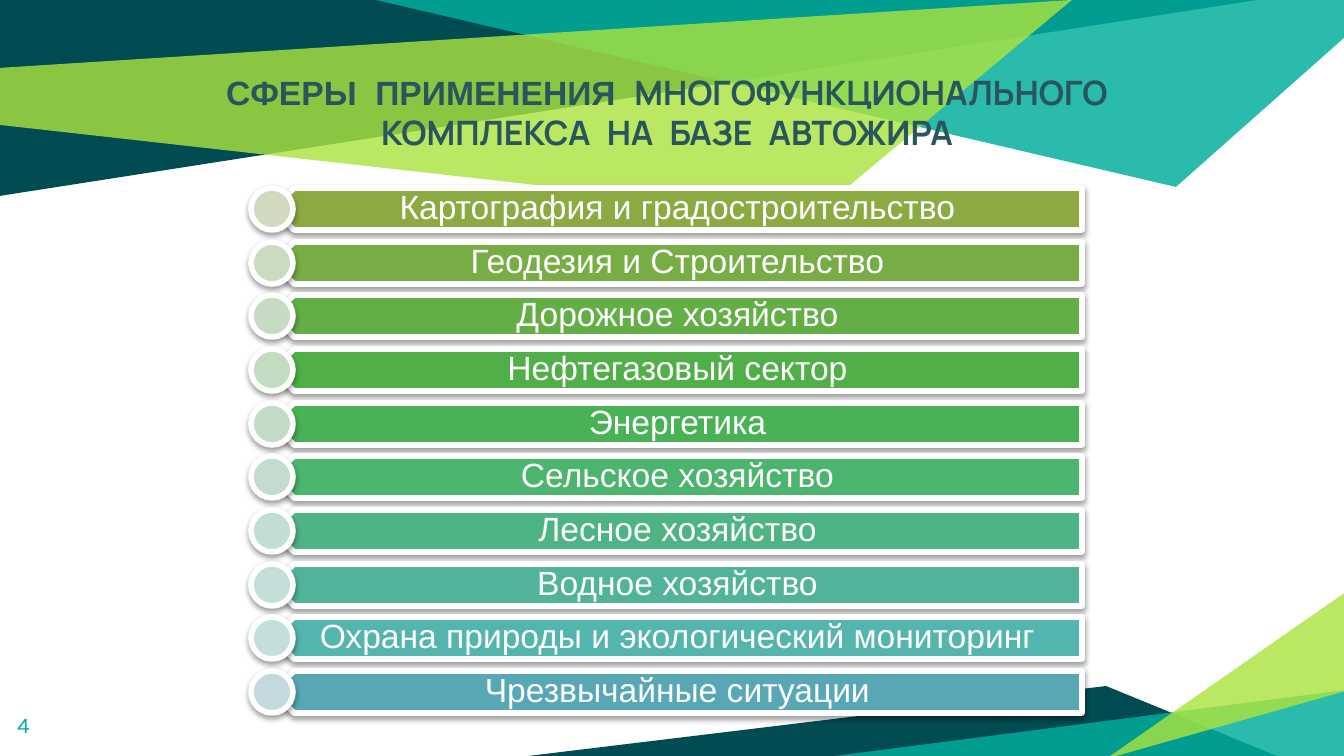
from typing import NamedTuple

from lxml import etree
from pptx import Presentation
from pptx.dml.color import RGBColor
from pptx.enum.shapes import MSO_SHAPE
from pptx.enum.text import MSO_ANCHOR, PP_ALIGN
from pptx.oxml.ns import qn
from pptx.util import Emu, Pt

PLATE, CIRCLE = MSO_SHAPE.PENTAGON, MSO_SHAPE.OVAL
TOP, MIDDLE = MSO_ANCHOR.TOP, MSO_ANCHOR.MIDDLE
LEFT, CENTER = PP_ALIGN.LEFT, PP_ALIGN.CENTER
EMU_PER_PX = 914400 / 134.4


class Theme(NamedTuple):
    dark: str = "004C52"
    teal: str = "00AE9D"
    lime: str = "ABE33F"
    title: str = "29555D"
    white: str = "FFFFFF"
    shadow: str = "000000"
    heading_size: int = 18
    number_size: int = 12
    outline: int = 3
    body_font: str = "Arial"
    title_font: str = "Manrope"
    number_font: str = "Karla"


class Box(NamedTuple):
    left: int
    top: int
    width: int
    height: int


class Facet(NamedTuple):
    points: list[tuple[int, int]]
    color: str
    opacity: int


class Sphere(NamedTuple):
    label: str
    bar: str
    dot: str


THEME = Theme()

FACETS = [
    # Top band
    Facet([(0, 0), (0, 196), (1257, 0)], THEME.dark, 100),
    Facet([(376, 0), (1176, 187), (1344, 38), (1344, 0)], THEME.teal, 83),
    Facet([(-1, 68), (0, 125), (813, 216), (1072, 0)], THEME.lime, 81),
    # Bottom corner
    Facet([(528, 756), (1277, 756), (1106, 686)], THEME.dark, 100),
    Facet([(1346, 690), (1346, 759), (812, 759)], THEME.teal, 83),
    Facet([(1346, 691), (1346, 592), (1106, 759)], THEME.lime, 81),
]

SPHERES = [
    Sphere("Картография и градостроительство", "8BAB42", "D0DAC0"),
    Sphere("Геодезия и Строительство", "77AD44", "CBDBC1"),
    Sphere("Дорожное хозяйство", "63AE45", "C6DBC1"),
    Sphere("Нефтегазовый сектор", "50B047", "C1DCC1"),
    Sphere("Энергетика", "49B256", "C2DCC7"),
    Sphere("Сельское хозяйство", "4BB46D", "C2DCCD"),
    Sphere("Лесное хозяйство", "4EB484", "C2DDD2"),
    Sphere("Водное хозяйство", "51B49A", "C3DDD8"),
    Sphere("Охрана природы и экологический мониторинг", "54B5AF", "C3DEDE"),
    Sphere("Чрезвычайные ситуации", "57A7B5", "C4D9DE"),
]
FIRST_TOP, LAST_TOP = 188, 671
BAR_LEFT, BAR_WIDTH, ROW_HEIGHT = 273, 809, 42
DOT_LEFT = 251

TITLE_PARTS = [
    ("СФЕРЫ ПРИМЕНЕНИЯ ", THEME.body_font),
    ("МНОГОФУНКЦИОНАЛЬНОГО КОМПЛЕКСА НА БАЗЕ АВТОЖИРА", THEME.title_font),
]


def px(length: int) -> Emu:
    return Emu(round(length * EMU_PER_PX))


def place(box: Box) -> list[Emu]:
    return [px(length) for length in box]


def draw_facet(slide, facet: Facet) -> None:
    builder = slide.shapes.build_freeform(*facet.points[0], scale=EMU_PER_PX)
    builder.add_line_segments(facet.points[1:], close=True)
    shape = builder.convert_to_shape()
    shape.shadow.inherit = False
    shape.line.fill.background()
    shape.fill.solid()
    shape.fill.fore_color.rgb = RGBColor.from_string(facet.color)
    if facet.opacity < 100:
        color = shape._element.spPr.find(qn("a:solidFill")).find(qn("a:srgbClr"))
        etree.SubElement(color, qn("a:alpha"), val=str(facet.opacity * 1000))


def draw_raised(slide, preset, box: Box, color: str, rotation: int = 0) -> None:
    """Draw a filled shape with a white outline and a soft shadow below."""
    shape = slide.shapes.add_shape(preset, *place(box))
    shape.rotation = rotation
    shape.fill.solid()
    shape.fill.fore_color.rgb = RGBColor.from_string(color)
    shape.line.color.rgb = RGBColor.from_string(THEME.white)
    shape.line.width = Pt(THEME.outline)
    shape.shadow.inherit = False
    effects = shape._element.spPr.find(qn("a:effectLst"))
    shadow = etree.SubElement(
        effects, qn("a:outerShdw"), blurRad=str(Pt(3.1)), dist=str(Pt(1.6)),
        dir="5400000", rotWithShape="0")
    color_node = etree.SubElement(shadow, qn("a:srgbClr"), val=THEME.shadow)
    etree.SubElement(color_node, qn("a:alpha"), val="38000")


def add_text_area(slide, box: Box, anchor, align, inset_x: int, inset_y: int):
    """Add an empty wrapping text box and return its first paragraph."""
    frame = slide.shapes.add_textbox(*place(box)).text_frame
    frame.word_wrap = True
    frame.vertical_anchor = anchor
    frame.margin_left = frame.margin_right = px(inset_x)
    frame.margin_top = frame.margin_bottom = px(inset_y)
    paragraph = frame.paragraphs[0]
    paragraph.alignment = align
    return paragraph


def add_run(paragraph, text: str, font: str, size: int, color: str, bold: bool = False):
    run = paragraph.add_run()
    run.text = text
    run.font.name = font
    run.font.size = Pt(size)
    run.font.bold = bold
    run.font.color.rgb = RGBColor.from_string(color)
    return run


def draw_title(slide) -> None:
    heading = add_text_area(slide, Box(175, 59, 984, 126), TOP, CENTER, 13, 13)
    heading.line_spacing = Pt(21.4)
    for text, font in TITLE_PARTS:
        for piece in text.replace(" ", "| |").split("|"):
            if not piece:
                continue
            run = add_run(heading, piece, font, THEME.heading_size, THEME.title, True)
            if piece == " ":  # widen the gap between words by 5 pt
                run.font._element.set("spc", "500")


def draw_sphere(slide, sphere: Sphere, top: int) -> None:
    bar = Box(BAR_LEFT, top, BAR_WIDTH, ROW_HEIGHT)
    draw_raised(slide, PLATE, bar, sphere.bar, rotation=180)
    label = add_text_area(slide, bar, MIDDLE, CENTER, 19, 9)
    label.line_spacing = 0.9
    add_run(label, sphere.label, THEME.body_font, THEME.heading_size, THEME.white)
    draw_raised(slide, CIRCLE, Box(DOT_LEFT, top, ROW_HEIGHT, ROW_HEIGHT), sphere.dot)


def main() -> None:
    deck = Presentation()
    deck.slide_width, deck.slide_height = px(1344), px(756)
    slide = deck.slides.add_slide(deck.slide_layouts[6])

    # Background facets
    for facet in FACETS:
        draw_facet(slide, facet)

    # Title and page number
    draw_title(slide)
    number = add_text_area(slide, Box(4, 698, 81, 58), TOP, LEFT, 13, 13)
    add_run(number, "4", THEME.number_font, THEME.number_size, THEME.teal)

    # Evenly spaced list of application areas
    pitch = (LAST_TOP - FIRST_TOP) / (len(SPHERES) - 1)
    for index, sphere in enumerate(SPHERES):
        draw_sphere(slide, sphere, round(FIRST_TOP + index * pitch))

    deck.save("out.pptx")


if __name__ == "__main__":
    main()
